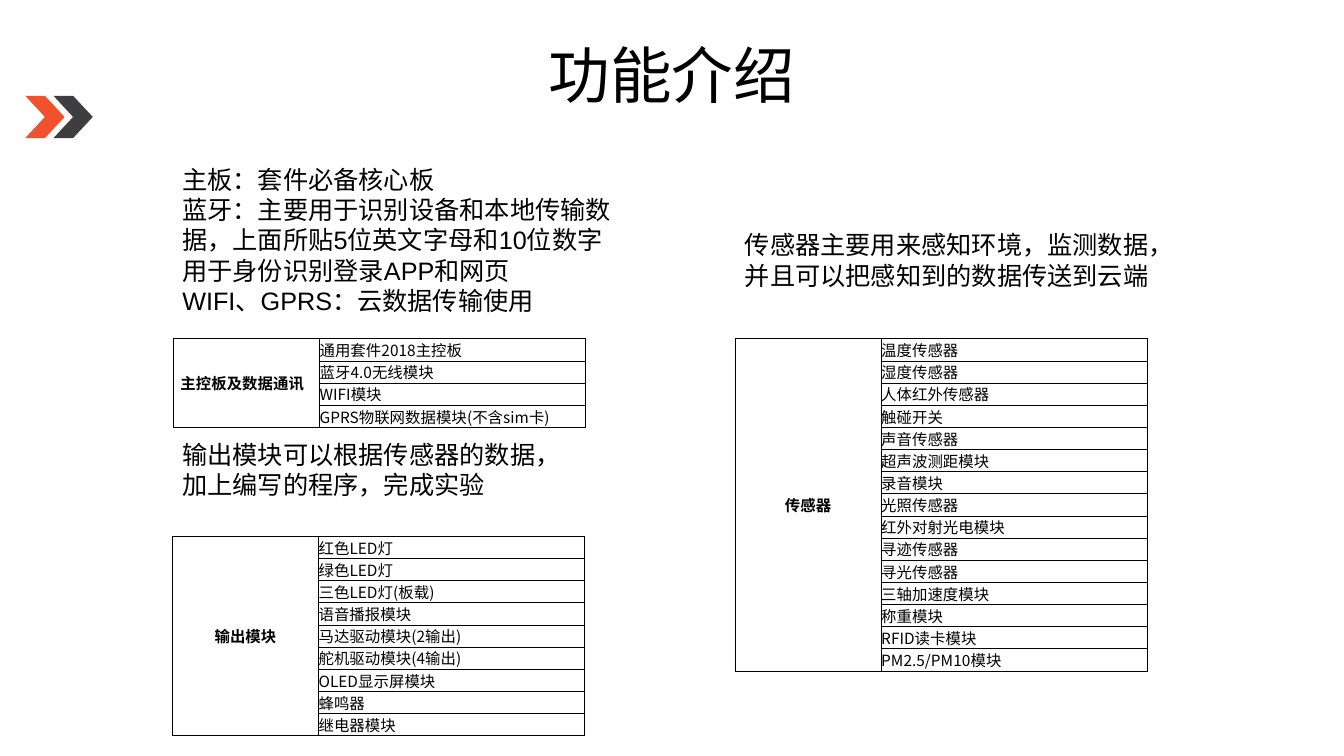
from lxml import etree
from pptx import Presentation
from pptx.dml.color import RGBColor
from pptx.enum.shapes import MSO_SHAPE
from pptx.enum.text import MSO_ANCHOR, MSO_AUTO_SIZE, PP_ALIGN
from pptx.oxml.ns import qn
from pptx.util import Pt

PX = 9144  # 100 px to the inch
TOP, MIDDLE, BOTTOM = MSO_ANCHOR.TOP, MSO_ANCHOR.MIDDLE, MSO_ANCHOR.BOTTOM
LEFT, CENTER = PP_ALIGN.LEFT, PP_ALIGN.CENTER
CHEVRON = MSO_SHAPE.CHEVRON
NO_FIT = MSO_AUTO_SIZE.NONE
CJK = "Noto Sans CJK SC"
COLORS = {"text": "000000", "border": "000000", "cell": "FFFFFF",
          "orange": "F0522D", "dark": "3E3E40"}


def rgb(name):
    return RGBColor.from_string(COLORS[name])


def write(tf, text, size=18, font="Arial", bold=False, align=LEFT, spacing=1.0):
    """Fill a text frame with one paragraph per line of text."""
    for i, line in enumerate(text.split("\n")):
        p = tf.paragraphs[0] if i == 0 else tf.add_paragraph()
        p.alignment, p.line_spacing = align, spacing
        r = p.add_run()
        r.text = line
        r.font.size, r.font.bold, r.font.name = Pt(size), bold, font
        r.font.color.rgb = rgb("text")
        rPr = r.font._element
        rPr.set("lang", "zh-CN")
        etree.SubElement(rPr, qn("a:ea"), typeface=CJK)


prs = Presentation()
prs.slide_width, prs.slide_height = 1333 * PX, 750 * PX
s = prs.slides.add_slide(prs.slide_layouts[5])

for x, color in ((25, "orange"), (53, "dark")):
    sp = s.shapes.add_shape(CHEVRON, x * PX, 95 * PX, 39 * PX, 42 * PX)
    sp.shadow.inherit = False
    sp.fill.solid()
    sp.fill.fore_color.rgb = rgb(color)
    sp.line.fill.background()

title = s.shapes.title
title.left, title.top, title.width, title.height = 292 * PX, 27 * PX, 749 * PX, 102 * PX
tf = title.text_frame
tf.auto_size, tf.vertical_anchor = NO_FIT, MIDDLE
write(tf, "功能介绍", size=44, align=CENTER, spacing=0.9)

notes = [
    (171, 158, 445, 161, TOP,
     "主板：套件必备核心板\n"
     "蓝牙：主要用于识别设备和本地传输数据，上面所贴5位英文字母和10位数字用于身份识别登录APP和网页\n"
     "WIFI、GPRS：云数据传输使用"),
    (729, 208, 422, 100, MIDDLE, "传感器主要用来感知环境，监测数据，并且可以把感知到的数据传送到云端"),
    (171, 424, 399, 83, MIDDLE, "输出模块可以根据传感器的数据，加上编写的程序，完成实验"),
]
for x, y, w, h, anchor, text in notes:
    tf = s.shapes.add_textbox(x * PX, y * PX, w * PX, h * PX).text_frame
    tf.word_wrap, tf.vertical_anchor = True, anchor
    write(tf, text)

# left, top, label, label alignment, label indent, modules
tables = [
    (172, 336, "主控板及数据通讯", LEFT, 7,
     ["通用套件2018主控板", "蓝牙4.0无线模块", "WIFI模块", "GPRS物联网数据模块(不含sim卡)"]),
    (729, 336, "传感器", CENTER, 0,
     ["温度传感器", "湿度传感器", "人体红外传感器", "触碰开关", "声音传感器",
      "超声波测距模块", "录音模块", "光照传感器", "红外对射光电模块", "寻迹传感器",
      "寻光传感器", "三轴加速度模块", "称重模块", "RFID读卡模块", "PM2.5/PM10模块"]),
    (171, 532, "输出模块", CENTER, 0,
     ["红色LED灯", "绿色LED灯", "三色LED灯(板载)", "语音播报模块", "马达驱动模块(2输出)",
      "舵机驱动模块(4输出)", "OLED显示屏模块", "蜂鸣器", "继电器模块"]),
]
LABEL_W, MODULE_W, ROW_H = 145, 264, 22
for x, y, label, align, indent, modules in tables:
    n = len(modules)
    table = s.shapes.add_table(n, 2, x * PX, y * PX, (LABEL_W + MODULE_W) * PX,
                               n * ROW_H * PX).table
    table.first_row = table.horz_banding = False
    table.columns[0].width, table.columns[1].width = LABEL_W * PX, MODULE_W * PX
    for cell in table.iter_cells():
        cell.margin_left = cell.margin_right = cell.margin_top = cell.margin_bottom = 0
        cell.vertical_anchor = BOTTOM
        tcPr = cell._tc.get_or_add_tcPr()
        for side in ("lnL", "lnR", "lnT", "lnB"):
            ln = etree.SubElement(tcPr, qn("a:" + side), w=str(Pt(0.5)))
            fill = etree.SubElement(ln, qn("a:solidFill"))
            etree.SubElement(fill, qn("a:srgbClr"), val=COLORS["border"])
        cell.fill.solid()
        cell.fill.fore_color.rgb = rgb("cell")
    for i, module in enumerate(modules):
        write(table.cell(i, 1).text_frame, module, size=11, font=CJK)
    head = table.cell(0, 0)
    head.merge(table.cell(n - 1, 0))
    head.vertical_anchor, head.margin_left = MIDDLE, indent * PX
    write(head.text_frame, label, size=11, font=CJK, bold=True, align=align)

prs.save("out.pptx")
